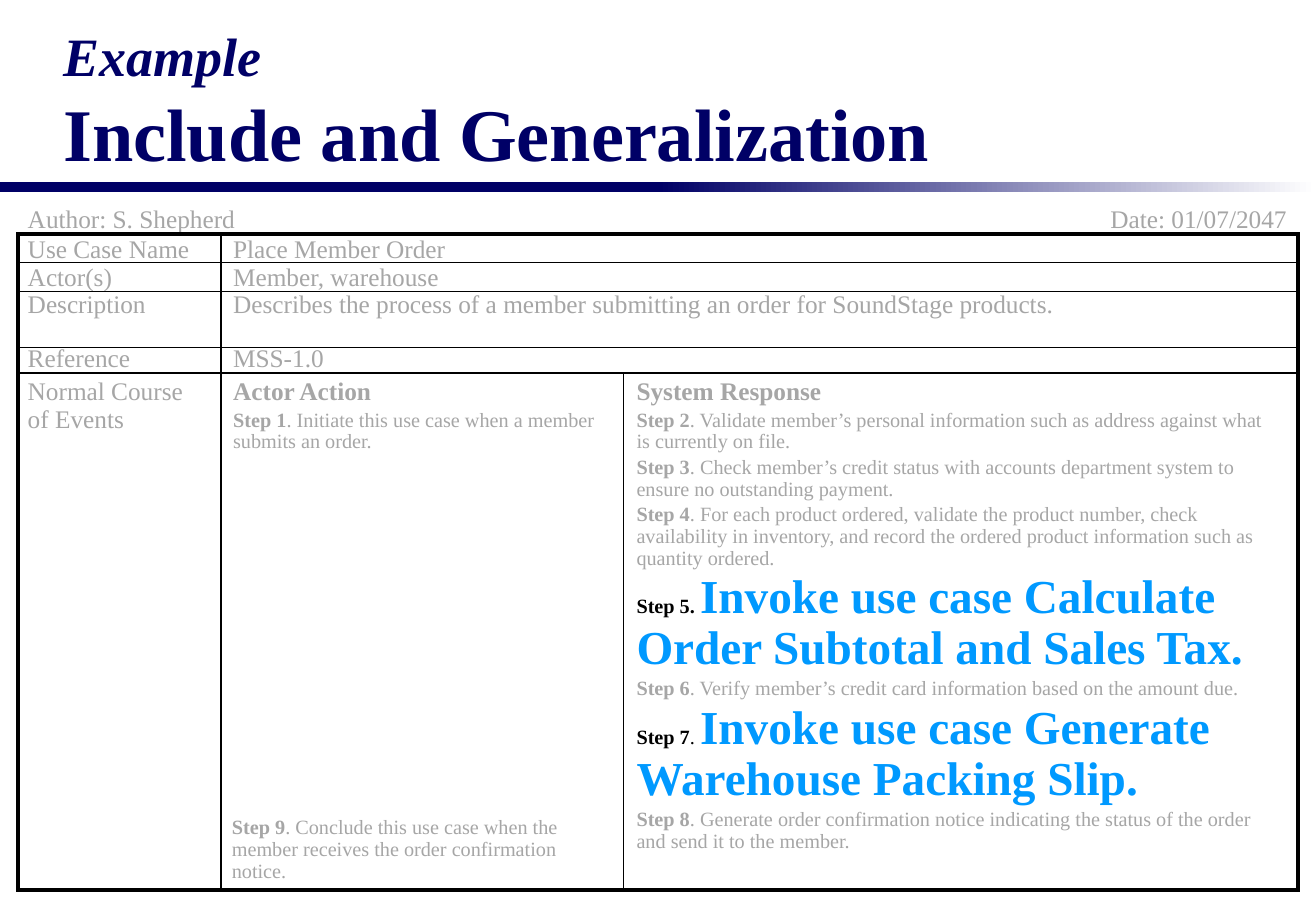
from lxml import etree
from pptx import Presentation
from pptx.dml.color import RGBColor
from pptx.enum.shapes import MSO_CONNECTOR as CONNECTOR, MSO_SHAPE as SHAPE
from pptx.enum.text import MSO_ANCHOR as ANCHOR, MSO_AUTO_SIZE as AUTO, PP_ALIGN as ALIGN
from pptx.oxml.ns import qn
from pptx.util import Inches, Pt

COLORS = {"navy": "000066", "white": "FFFFFF", "muted": "A6A6A6",
          "accent": "0099FF", "black": "000000"}
FONT = "Times New Roman"
WIDTH, HEIGHT = 10.83, 7.5
LABEL_SIZE, STEP_SIZE, CALL_SIZE = 15, 12, 28

# A run is (text, format); a paragraph is a list of runs.
TITLE = [("Example\n", {"size": 32, "italic": True}),
         ("Include and Generalization", {"size": 44})]

# Each line: text, tab stops, space before in points
HEADER = [
    ("Author: S. Shepherd\tDate: 01/07/2047", (8.91,), 0),
    ("Use Case Name\tPlace Member Order", (1.69,), 2),
    ("Actor(s)\tMember, warehouse", (1.69,), 0),
    ("Description\tDescribes the process of a member submitting an order "
     "for SoundStage products.", (1.69,), 0),
    ("Reference\tMSS-1.0", (1.69,), 15.5),
]
EVENTS_LABEL = "Normal Course\nof Events"
ACTOR_HEADING, SYSTEM_HEADING = "Actor Action", "System Response"
FIRST_ACTION = [("Step 1", ". Initiate this use case when a member submits an order.")]
LAST_ACTION = [("Step 9", ". Conclude this use case when the member receives "
                "the order confirmation notice.")]
RESPONSES = [
    ("Step 2", ". Validate member’s personal information such as address against "
     "what is currently on file."),
    ("Step 3", ". Check member’s credit status with accounts department system to "
     "ensure no outstanding payment."),
    ("Step 4", ". For each product ordered, validate the product number, check "
     "availability in inventory, and record the ordered product information "
     "such as quantity ordered."),
    ("Step 5. ", "", "Invoke use case Calculate Order Subtotal and Sales Tax."),
    ("Step 6", ". Verify member’s credit card information based on the amount due."),
    ("Step 7", ". ", "Invoke use case Generate Warehouse Packing Slip."),
    ("Step 8", ". Generate order confirmation notice indicating the status of the "
     "order and send it to the member."),
]

# Frame edges, column and row rules, in inches
LEFT, TOP, RIGHT, BOTTOM = 0.15, 1.93, 10.68, 7.33
LABEL_EDGE, ACTION_EDGE = 1.82, 5.13
ROW_EDGES = [2.16, 2.4, 2.86, 3.07]
EVENTS_TOP = ROW_EDGES[-1]
RULES = ([(LEFT, y, RIGHT, y) for y in ROW_EDGES]
         + [(LABEL_EDGE, TOP, LABEL_EDGE, BOTTOM),
            (ACTION_EDGE, EVENTS_TOP, ACTION_EDGE, BOTTOM)])
BAR_TOP, BAR_HEIGHT = 1.5, 0.08


def rgb(name):
    return RGBColor.from_string(COLORS[name])


def add_run(paragraph, text, size=LABEL_SIZE, color="muted", bold=False, italic=False):
    """Add formatted text, turning each newline into a line break."""
    for i, part in enumerate(text.split("\n")):
        if i:
            paragraph.add_line_break()
        if part:
            run = paragraph.add_run()
            run.text = part
            font = run.font
            font.name, font.size, font.bold, font.italic = FONT, Pt(size), bold, italic
            font.color.rgb = rgb(color)


def add_paragraph(frame, runs, tabs=(), before=0, spacing=0.9):
    used = frame.paragraphs[0].runs
    paragraph = frame.add_paragraph() if used else frame.paragraphs[0]
    paragraph.alignment = ALIGN.LEFT
    paragraph.line_spacing = spacing
    paragraph.space_before = Pt(before)
    if tabs:
        stops = etree.SubElement(paragraph._p.get_or_add_pPr(), qn("a:tabLst"))
        for stop in tabs:
            etree.SubElement(stops, qn("a:tab"), pos=str(Inches(stop)), algn="l")
    for text, style in runs:
        add_run(paragraph, text, **style)


def add_box(slide, left, top, width, height):
    frame = slide.shapes.add_textbox(*map(Inches, (left, top, width, height))).text_frame
    frame.word_wrap = True
    return frame


def add_heading(frame, text):
    add_paragraph(frame, [(text, {"bold": True})], before=2)


def add_steps(frame, steps, before=2):
    """Add steps; one that invokes another use case stands out."""
    for name, detail, *call in steps:
        style = {"size": STEP_SIZE, "color": "black" if call else "muted"}
        runs = [(name, {**style, "bold": True})]
        if detail:
            runs.append((detail, style))
        runs += [(text, {"size": CALL_SIZE, "color": "accent", "bold": True})
                 for text in call]
        add_paragraph(frame, runs, tabs=(0.69,), before=before)


def add_rect(slide, left, top, width, height):
    rect = slide.shapes.add_shape(SHAPE.RECTANGLE, *map(Inches, (left, top, width, height)))
    rect.shadow.inherit = False
    return rect


def add_rule(slide, ends):
    rule = slide.shapes.add_connector(CONNECTOR.STRAIGHT, *map(Inches, ends))
    rule.line.color.rgb = rgb("black")
    rule.line.width = Pt(1)
    etree.SubElement(rule._element.spPr, qn("a:effectLst"))


def add_title(slide):
    title = slide.shapes.title
    title.left, title.top, title.width, title.height = map(Inches, (0.42, 0.29, 10, 1.21))
    frame = title.text_frame
    frame.auto_size, frame.word_wrap = AUTO.NONE, True
    frame.vertical_anchor = ANCHOR.BOTTOM
    add_paragraph(frame, [(text, {"color": "navy", "bold": True, **style})
                          for text, style in TITLE], spacing=1.0)


def add_bars(slide):
    solid, fading = [add_rect(slide, left, BAR_TOP, WIDTH / 2, BAR_HEIGHT)
                     for left in (0, WIDTH / 2)]
    solid.fill.solid()
    solid.fill.fore_color.rgb = rgb("navy")
    fading.fill.gradient()
    fading.fill.gradient_angle = 0
    for stop, color in zip(fading.fill.gradient_stops, ("navy", "white")):
        stop.color.rgb = rgb(color)
    for bar in (solid, fading):
        bar.line.fill.background()


def add_use_case(slide):
    action = add_box(slide, LABEL_EDGE, EVENTS_TOP, 3.48, 0.78)
    add_heading(action, ACTOR_HEADING)
    add_steps(action, FIRST_ACTION)

    response = add_box(slide, ACTION_EDGE + 0.01, EVENTS_TOP, 5.5, 4.25)
    add_heading(response, SYSTEM_HEADING)
    add_steps(response, RESPONSES)

    header = add_box(slide, 0.13, 1.65, 10.58, 1.37)
    for text, tabs, before in HEADER:
        add_paragraph(header, [(text, {})], tabs, before)

    border = add_rect(slide, LEFT, TOP, RIGHT - LEFT, BOTTOM - TOP)
    border.fill.background()
    border.line.color.rgb = rgb("black")
    border.line.width = Pt(2.25)
    etree.SubElement(border._element.spPr.find(qn("a:ln")), qn("a:miter"), lim="800000")
    for ends in RULES:
        add_rule(slide, ends)

    add_paragraph(add_box(slide, 0.13, EVENTS_TOP, 1.7, 0.53), [(EVENTS_LABEL, {})])
    add_steps(add_box(slide, LABEL_EDGE - 0.01, 6.68, 3.3, 0.6), LAST_ACTION, before=0)


def main():
    deck = Presentation()
    deck.slide_width, deck.slide_height = Inches(WIDTH), Inches(HEIGHT)
    slide = deck.slides.add_slide(deck.slide_layouts[5])
    add_bars(slide)
    add_title(slide)
    add_use_case(slide)
    deck.save("out.pptx")


if __name__ == "__main__":
    main()
